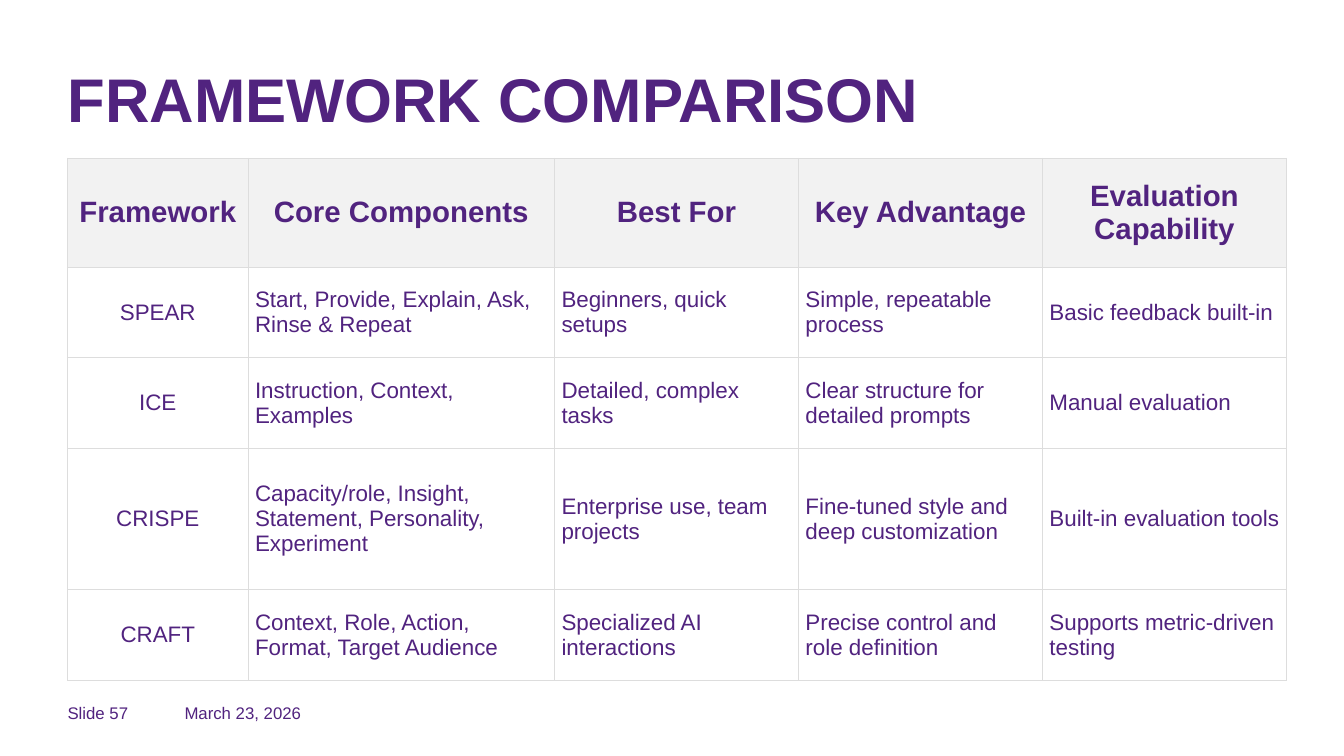
from dataclasses import dataclass

from lxml import etree
from pptx import Presentation
from pptx.dml.color import RGBColor
from pptx.enum import shapes, text
from pptx.oxml import ns
from pptx.util import Inches, Pt


@dataclass(frozen=True)
class Theme:
    font: str = "Arial"
    purple: str = "51237F"
    rule: str = "0095C8"
    header_fill: str = "F2F2F2"
    border: str = "DDDDDD"
    title_size: int = 44
    header_size: int = 21
    body_size: int = 16
    footer_size: int = 12


theme = Theme()


def write(frame, words, size, bold=False, align=text.PP_ALIGN.LEFT):
    """Fill the frame's first paragraph with one styled run and return the paragraph."""
    frame.word_wrap = True
    para = frame.paragraphs[0]
    para.alignment = align
    span = para.add_run()
    span.text = words
    span.font.name = theme.font
    span.font.size = Pt(size)
    span.font.bold = bold
    span.font.color.rgb = RGBColor.from_string(theme.purple)
    return para


def add_borders(cell):
    properties = cell._tc.get_or_add_tcPr()
    for side in ("a:lnL", "a:lnR", "a:lnT", "a:lnB"):
        line = etree.SubElement(properties, ns.qn(side), w=str(Pt(0.75)))
        fill = etree.SubElement(line, ns.qn("a:solidFill"))
        etree.SubElement(fill, ns.qn("a:srgbClr"), val=theme.border)


deck = Presentation()
deck.slide_width = Inches(13.33)
deck.slide_height = Inches(7.5)
page = deck.slides.add_slide(deck.slide_layouts[6])

# Footer rule
rule = page.shapes.add_connector(
    shapes.MSO_CONNECTOR.STRAIGHT,
    Inches(0.67), Inches(6.75), Inches(12.75), Inches(6.75))
rule.line.color.rgb = RGBColor.from_string(theme.rule)
rule.line.width = Pt(0.5)
etree.SubElement(rule._element.spPr, ns.qn("a:effectLst"))

# Title
title = page.shapes.add_textbox(
    Inches(0.67), Inches(0.75), Inches(12.08), Inches(1.25)).text_frame
title.margin_left = title.margin_right = title.margin_top = title.margin_bottom = 0
heading = write(title, "FRAMEWORK COMPARISON", theme.title_size, bold=True)
heading.line_spacing = Pt(42)

# Comparison table
comparison = [
    ("Framework", "Core Components", "Best For", "Key Advantage",
     "Evaluation Capability"),
    ("SPEAR", "Start, Provide, Explain, Ask, Rinse & Repeat",
     "Beginners, quick setups", "Simple, repeatable process",
     "Basic feedback built-in"),
    ("ICE", "Instruction, Context, Examples", "Detailed, complex tasks",
     "Clear structure for detailed prompts", "Manual evaluation"),
    ("CRISPE", "Capacity/role, Insight, Statement, Personality, Experiment",
     "Enterprise use, team projects", "Fine-tuned style and deep customization",
     "Built-in evaluation tools"),
    ("CRAFT", "Context, Role, Action, Format, Target Audience",
     "Specialized AI interactions", "Precise control and role definition",
     "Supports metric-driven testing"),
]
column_widths = [1.79, 3.04, 2.42, 2.42, 2.42]
row_heights = [1.08, 0.9, 0.9, 1.4, 0.9]

table = page.shapes.add_table(
    len(row_heights), len(column_widths), Inches(0.67), Inches(1.57),
    Inches(sum(column_widths)), Inches(sum(row_heights))).table
table.horz_banding = False
for column, width in zip(table.columns, column_widths):
    column.width = Inches(width)

for r, (height, entries) in enumerate(zip(row_heights, comparison)):
    table.rows[r].height = Inches(height)
    header = r == 0
    for c, words in enumerate(entries):
        cell = table.cell(r, c)
        cell.vertical_anchor = text.MSO_ANCHOR.MIDDLE
        cell.margin_left = cell.margin_right = Inches(0.07)
        cell.margin_top = cell.margin_bottom = Inches(0.07)
        add_borders(cell)
        if header:
            cell.fill.solid()
            cell.fill.fore_color.rgb = RGBColor.from_string(theme.header_fill)
        else:
            cell.fill.background()
        write(cell.text_frame, words,
              theme.header_size if header else theme.body_size, bold=header,
              align=text.PP_ALIGN.CENTER if header or c == 0 else text.PP_ALIGN.LEFT)

# Footer: slide number and date
for words, left, width in [("Slide 57", 0.67, 0.87), ("March 23, 2026", 1.83, 2.31)]:
    footer = page.shapes.add_textbox(
        Inches(left), Inches(6.95), Inches(width), Inches(0.24)).text_frame
    footer.margin_left = footer.margin_right = 0
    footer.margin_top = footer.margin_bottom = 0
    footer.vertical_anchor = text.MSO_ANCHOR.MIDDLE
    write(footer, words, theme.footer_size)

deck.save("out.pptx")
